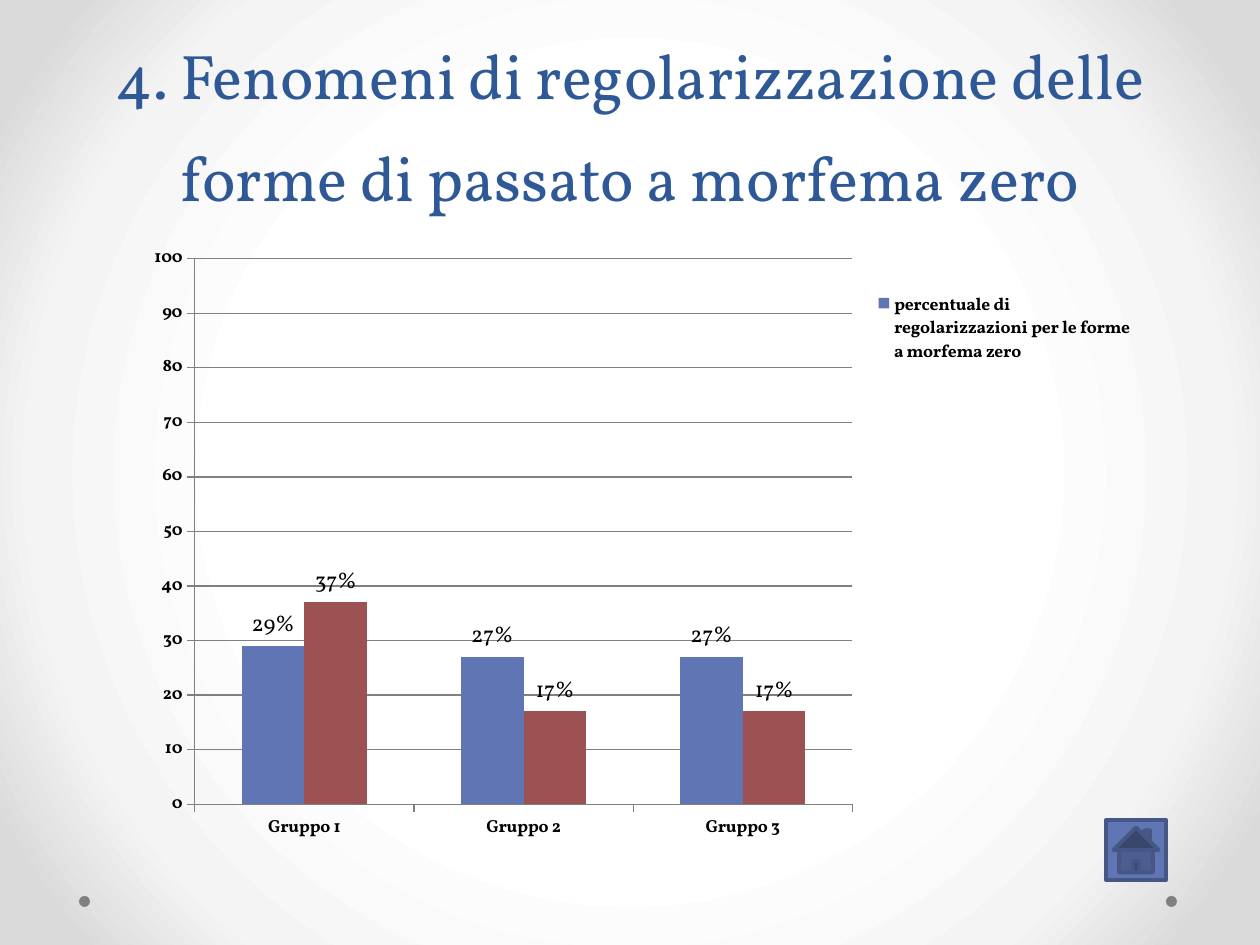
import pptx
import pptx.chart.data
import pptx.dml.color
import pptx.enum.chart
import pptx.enum.shapes
import pptx.enum.text
import pptx.oxml
import pptx.oxml.ns
import pptx.util

RGB = pptx.dml.color.RGBColor
NAVY = RGB(0x2F, 0x58, 0x97)
BLUE = RGB(0x60, 0x76, 0xB4)
EDGE = RGB(0x47, 0x57, 0x85)
RED = RGB(0x9C, 0x52, 0x52)
GRAY = RGB(0x80, 0x80, 0x80)
BLACK = RGB(0, 0, 0)
WHITE = RGB(0xFF, 0xFF, 0xFF)
PALE = RGB(0xF4, 0xF4, 0xF4)
DIM = RGB(0xDA, 0xDA, 0xDA)
FACE = "Vollkorn"
SCALE = 914400 / 126
NS = pptx.oxml.ns.nsdecls
KIND = pptx.enum.shapes.MSO_SHAPE
Pt = pptx.util.Pt

GROUPS = ["Gruppo 1", "Gruppo 2", "Gruppo 3"]
SERIES = [
    ("percentuale di regolarizzazioni per le forme a morfema zero", (29, 27, 27), BLUE),
    ("", (37, 17, 17), RED),
]


def emu(*sizes):
    return [round(size * SCALE) for size in sizes]


def style(font, size, color, bold=False):
    font.name = FACE
    font.size = Pt(size)
    font.bold = bold
    font.color.rgb = color


def backdrop(slide):
    stops = "".join(
        f'<a:gs pos="{spot * 1000}"><a:srgbClr val="{color}"/></a:gs>'
        for spot, color in ((50, WHITE), (76, PALE), (92, DIM)))
    slide.element.cSld.insert(0, pptx.oxml.parse_xml(
        f'<p:bg {NS("p", "a")}><p:bgPr><a:gradFill rotWithShape="1">'
        f'<a:gsLst>{stops}</a:gsLst><a:path path="circle">'
        '<a:fillToRect l="50000" t="50000" r="50000" b="50000"/></a:path>'
        '</a:gradFill><a:effectLst/></p:bgPr></p:bg>'))


def mark(slide, kind, box, fill, edge=None):
    shape = slide.shapes.add_shape(kind, *emu(*box))
    shape.shadow.inherit = False
    shape.fill.solid()
    shape.fill.fore_color.rgb = fill
    if edge is None:
        shape.line.fill.background()
    else:
        shape.line.color.rgb = edge
        shape.line.width = Pt(2.25)


def heading(slide, box):
    frame = slide.shapes.add_textbox(*emu(*box)).text_frame
    frame.word_wrap = True
    frame.vertical_anchor = pptx.enum.text.MSO_ANCHOR.BOTTOM
    para = frame.paragraphs[0]
    para.text = "4. Fenomeni di regolarizzazione delle forme di passato a morfema zero"
    para.alignment = pptx.enum.text.PP_ALIGN.CENTER
    para.line_spacing = Pt(58)
    style(para.font, 36, NAVY)


def layout(box, inner=False):
    target = '<c:layoutTarget val="inner"/>' if inner else ""
    modes = "".join(f'<c:{side}Mode val="edge"/>' for side in "xy")
    parts = "".join(f'<c:{key} val="{value}"/>' for key, value in zip("xywh", box))
    return pptx.oxml.parse_xml(
        f'<c:layout {NS("c")}><c:manualLayout>{target}{modes}{parts}'
        '</c:manualLayout></c:layout>')


def legend(chart):
    chart.has_legend = True
    key = chart.legend
    key.position = pptx.enum.chart.XL_LEGEND_POSITION.RIGHT
    key.include_in_layout = False
    style(key.font, 10, BLACK, True)
    node = chart.element.find(".//" + pptx.oxml.ns.qn("c:legend"))
    for old in node.findall(pptx.oxml.ns.qn("c:layout")):
        node.remove(old)
    node.insert(1, pptx.oxml.parse_xml(
        f'<c:legendEntry {NS("c")}><c:idx val="1"/><c:delete val="1"/></c:legendEntry>'))
    node.insert(2, layout((0.73, 0.09, 0.26, 0.13)))


def columns(slide, box):
    data = pptx.chart.data.CategoryChartData(number_format='0"%"')
    data.categories = GROUPS
    for name, values, color in SERIES:
        data.add_series(name, values)
    chart = slide.shapes.add_chart(
        pptx.enum.chart.XL_CHART_TYPE.COLUMN_CLUSTERED, *emu(*box), data).chart
    chart.has_title = False
    style(chart.font, 10, BLACK)
    plot = chart.plots[0]
    plot.gap_width = 150
    plot.overlap = 0
    plot.vary_by_categories = False
    for series, (name, values, color) in zip(plot.series, SERIES):
        series.format.fill.solid()
        series.format.fill.fore_color.rgb = color
        labels = series.data_labels
        labels.show_value = True
        labels.number_format = '0"%"'
        labels.number_format_is_linked = False
        labels.position = pptx.enum.chart.XL_LABEL_POSITION.OUTSIDE_END
        style(labels.font, 13, BLACK)
    across, up = chart.category_axis, chart.value_axis
    for axis in (across, up):
        axis.major_tick_mark = pptx.enum.chart.XL_TICK_MARK.OUTSIDE
        axis.format.line.color.rgb = GRAY
        style(axis.tick_labels.font, 10, BLACK, True)
    up.minimum_scale, up.maximum_scale, up.major_unit = 0, 100, 10
    up.tick_labels.number_format = "0"
    up.tick_labels.number_format_is_linked = False
    up.has_major_gridlines = True
    up.major_gridlines.format.line.color.rgb = GRAY
    area = chart.element.find(".//" + pptx.oxml.ns.qn("c:plotArea"))
    for old in area.findall(pptx.oxml.ns.qn("c:layout")):
        area.remove(old)
    area.insert(0, layout((0.06, 0.04, 0.65, 0.88), True))
    legend(chart)


def main():
    deck = pptx.Presentation()
    deck.slide_width, deck.slide_height = emu(1260, 945)
    slide = deck.slides.add_slide(deck.slide_layouts[6])
    backdrop(slide)
    for left in (1166, 79):
        mark(slide, KIND.OVAL, (left, 896, 11, 11), GRAY)
    heading(slide, (63, 0, 1134, 220))
    columns(slide, (134, 234, 1012, 620))
    mark(slide, KIND.ACTION_BUTTON_HOME, (1106, 820, 60, 60), BLUE, EDGE)
    deck.save("out.pptx")


if __name__ == "__main__":
    main()
